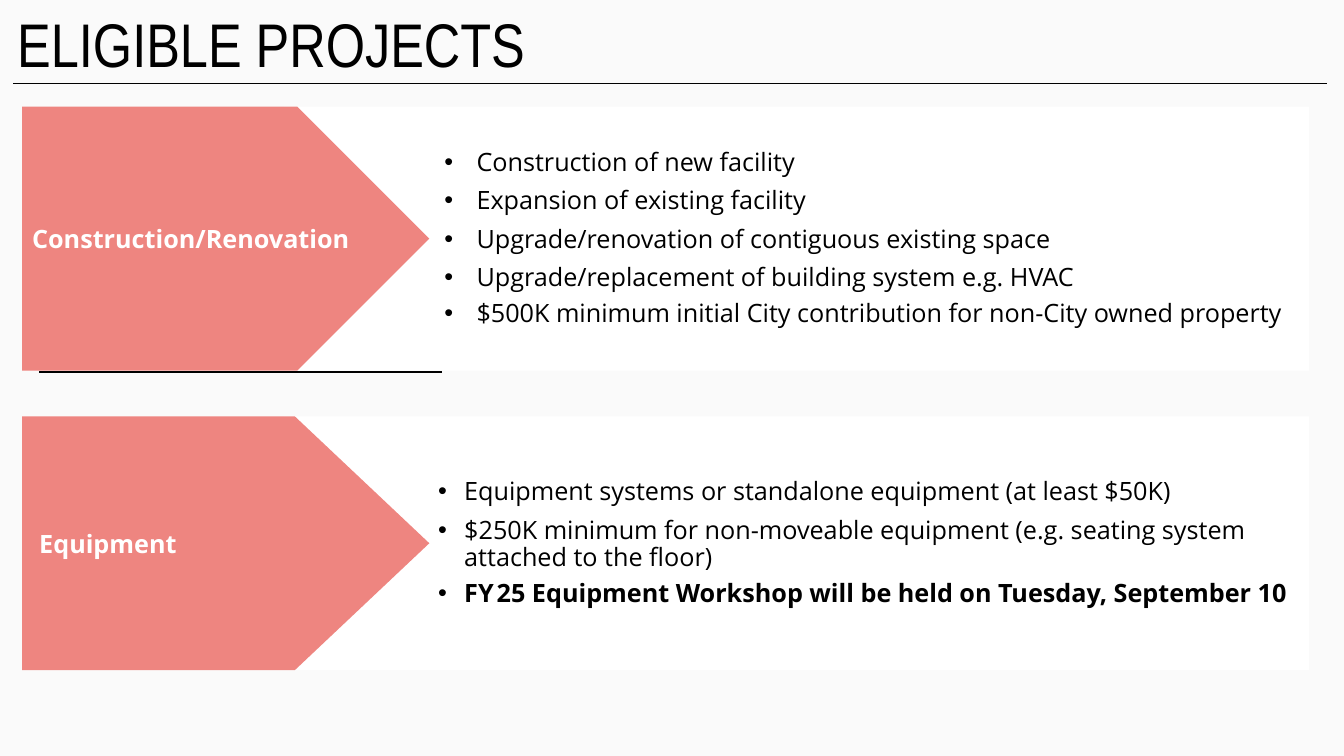
from lxml.etree import SubElement
from pptx import Presentation
from pptx.dml.color import RGBColor
from pptx.enum.shapes import MSO_CONNECTOR, MSO_SHAPE
from pptx.enum.text import MSO_ANCHOR, PP_ALIGN
from pptx.oxml.ns import qn
from pptx.util import Cm, Pt

BLACK = RGBColor(0x00, 0x00, 0x00)
WHITE = RGBColor(0xFF, 0xFF, 0xFF)
CORAL = RGBColor(0xEE, 0x85, 0x80)
PAPER = RGBColor(0xFA, 0xFA, 0xFA)
BODY_FONT = "Open Sans"
TITLE_FONT = "Arial Narrow"

CONSTRUCTION = [
    [("Construction of new facility", 18)],
    [("Expansion of existing facility", 18)],
    [("Upgrade/renovation of contiguous existing space", 18)],
    [("Upgrade/replacement of building system e.g. HVAC", 18)],
    [("$500K minimum initial City contribution for non-City owned property", 18)],
]
EQUIPMENT = [
    [("Equipment systems or standalone equipment (at least $50K)", 18)],
    [("$250K minimum for non-moveable equipment "
      "(e.g. seating system attached to the floor)", 18)],
    [("FY", 18), (" ", 8),
     ("25 Equipment Workshop will be held on Tuesday, September 10", 18)],
]


def add_run(paragraph, text, size, color, font=BODY_FONT, bold=False):
    run = paragraph.add_run()
    run.text = text
    run.font.size = Pt(size)
    run.font.name = font
    run.font.bold = bold
    run.font.color.rgb = color


def set_indent(paragraph, left, first=0):
    properties = paragraph._p.get_or_add_pPr()
    properties.set("marL", str(Cm(left)))
    properties.set("indent", str(Cm(first)))
    return properties


def add_bullet(paragraph, left, hanging):
    properties = set_indent(paragraph, left, -hanging)
    color = SubElement(properties, qn("a:buClr"))
    SubElement(color, qn("a:srgbClr")).set("val", str(BLACK))
    SubElement(properties, qn("a:buFont")).set("typeface", "Arial")
    SubElement(properties, qn("a:buChar")).set("char", "•")


def add_block(slide, preset, left, top, width, height, color):
    block = slide.shapes.add_shape(preset, Cm(left), Cm(top), Cm(width), Cm(height))
    block.shadow.inherit = False
    block.fill.solid()
    block.fill.fore_color.rgb = color
    block.line.fill.background()
    block.text_frame.word_wrap = True
    block.text_frame.vertical_anchor = MSO_ANCHOR.MIDDLE
    return block


def add_rule(slide, left, right, y, weight):
    rule = slide.shapes.add_connector(
        MSO_CONNECTOR.STRAIGHT, Cm(left), Cm(y), Cm(right), Cm(y))
    rule.line.color.rgb = BLACK
    rule.line.width = Pt(weight)
    SubElement(rule._element.spPr, qn("a:effectLst"))


def add_title(slide, text):
    title = slide.shapes.title
    title.left, title.top = Cm(0), Cm(0)
    title.width, title.height = Cm(33.87), Cm(2.16)
    title.text_frame.vertical_anchor = MSO_ANCHOR.MIDDLE
    heading = title.text_frame.paragraphs[0]
    heading.alignment = PP_ALIGN.LEFT
    set_indent(heading, 0.18)
    add_run(heading, text, 44, BLACK, TITLE_FONT)


def add_criteria(slide, top, height, items, left, hanging, bold_last=False):
    panel = add_block(slide, MSO_SHAPE.RECTANGLE, 7.16, top, 25.83, height, WHITE)
    frame = panel.text_frame
    last = len(items) - 1
    for index, pieces in enumerate(items):
        item = frame.add_paragraph() if index else frame.paragraphs[0]
        item.alignment = PP_ALIGN.LEFT
        item.line_spacing = 0.9
        if index:
            item.space_before = Pt(6 if index == last else 8)
        add_bullet(item, left, hanging)
        for text, size in pieces:
            add_run(item, text, size, BLACK, bold=bold_last and index == last)


def add_category(slide, top, height, text, point, indent=0):
    arrow = add_block(slide, MSO_SHAPE.PENTAGON, 0.56, top, 10.26, height, CORAL)
    arrow.adjustments[0] = point
    label = arrow.text_frame.paragraphs[0]
    label.alignment = PP_ALIGN.LEFT
    set_indent(label, indent)
    add_run(label, text, 18, WHITE, bold=True)


def main():
    deck = Presentation()
    deck.slide_width, deck.slide_height = Cm(33.87), Cm(19.05)
    slide = deck.slides.add_slide(deck.slide_layouts[5])
    slide.background.fill.solid()
    slide.background.fill.fore_color.rgb = PAPER

    add_title(slide, "ELIGIBLE PROJECTS")
    add_rule(slide, 0.33, 33.43, 2.11, 1)

    add_criteria(slide, 2.69, 6.65, CONSTRUCTION, 4.6, 0.81)
    add_rule(slide, 0.99, 11.15, 9.37, 1.5)
    add_category(slide, 2.69, 6.65, "Construction/Renovation", 0.5)

    add_criteria(slide, 10.49, 6.4, EQUIPMENT, 4.29, 0.66, bold_last=True)
    add_category(slide, 10.49, 6.4, "Equipment", 0.53, indent=0.18)

    deck.save("out.pptx")


if __name__ == "__main__":
    main()
